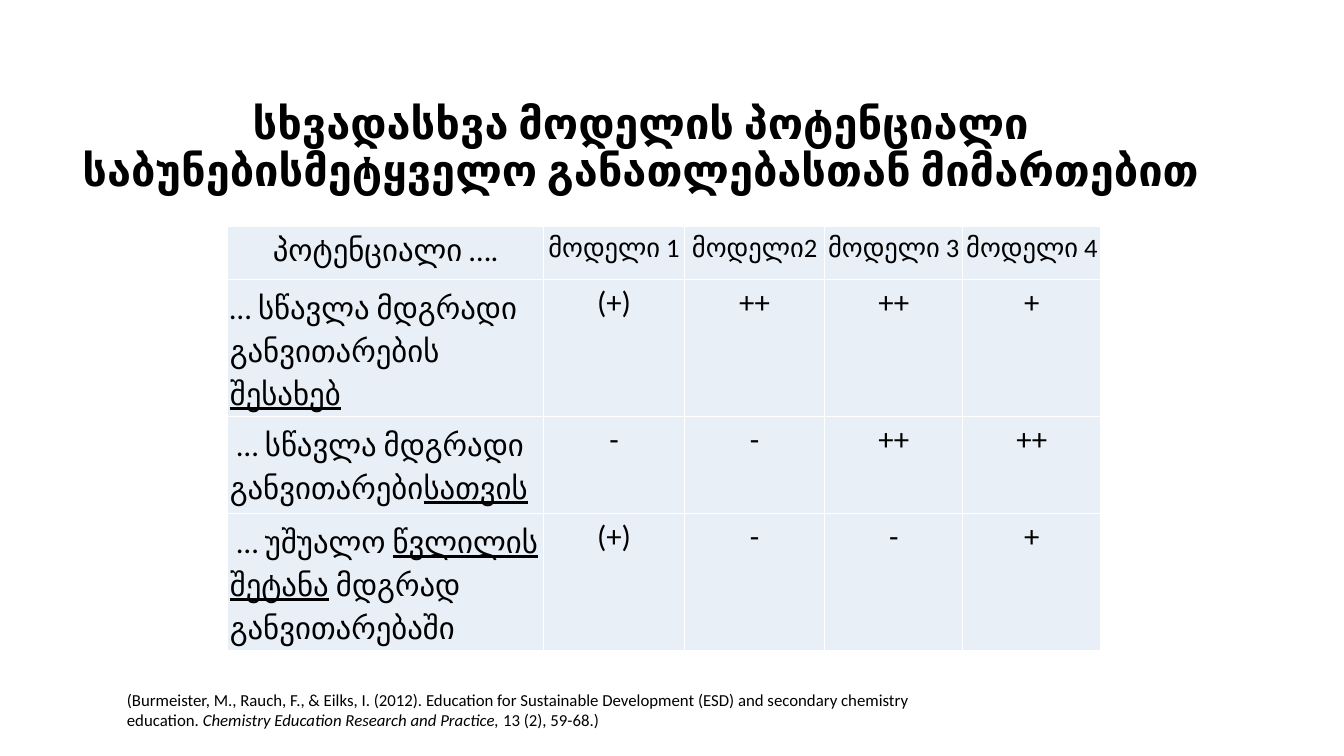
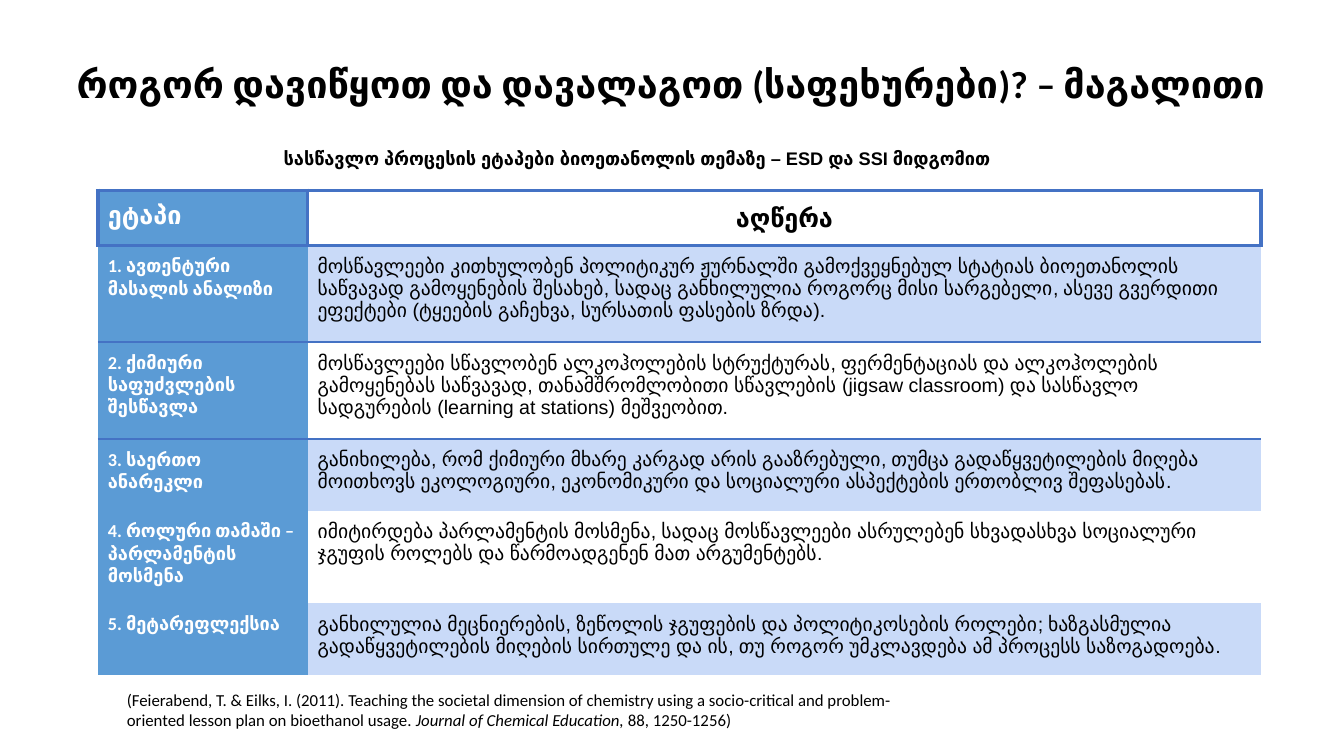
import pptx
import pptx.dml.color
import pptx.enum.text
import pptx.oxml
import pptx.oxml.ns
import pptx.util

Inches = pptx.util.Inches
CENTER = pptx.enum.text.PP_ALIGN.CENTER
LEFT = pptx.enum.text.PP_ALIGN.LEFT
MIDDLE = pptx.enum.text.MSO_ANCHOR.MIDDLE
TOP = pptx.enum.text.MSO_ANCHOR.TOP
BLACK, WHITE = "000000", "FFFFFF"
PALE, STAGE_BLUE, BAND_BLUE, LINE_BLUE = "E9EFF7", "5B9BD5", "C9DAF8", "4472C4"
NO_STYLE = "{2D5ABB26-0587-4C30-8999-92F81FD0307C}"
TITLE = {"size": 31, "bold": True, "align": CENTER, "spacing": 0.9}


def write(frame, runs, size, font="Calibri", color=BLACK, bold=False, align=LEFT, spacing=None):
    paragraph = frame.paragraphs[0]
    paragraph.alignment = align
    paragraph.line_spacing = spacing
    for text, changes in runs:
        run = paragraph.add_run()
        run.text = text
        values = {"name": font, "size": pptx.util.Pt(size), "bold": bold, **changes}
        for name, value in values.items():
            setattr(run.font, name, value)
        run.font.color.rgb = pptx.dml.color.RGBColor.from_string(color)


def style_cell(cell, fill, margins, borders):
    for side, (color, width) in borders.items():
        cell._tc.get_or_add_tcPr().append(pptx.oxml.parse_xml(
            f'<a:ln{side} {pptx.oxml.ns.nsdecls("a")} w="{pptx.util.Pt(width)}">'
            f'<a:solidFill><a:srgbClr val="{color}"/></a:solidFill></a:ln{side}>'))
    if fill:
        cell.fill.solid()
        cell.fill.fore_color.rgb = pptx.dml.color.RGBColor.from_string(fill)
    else:
        cell.fill.background()
    for name, value in zip(("left", "right", "top", "bottom"), margins):
        setattr(cell, f"margin_{name}", Inches(value))


presentation = pptx.Presentation()
presentation.slide_width = Inches(13.33)
presentation.slide_height = Inches(7.5)

slide_texts = [
    [
        ((0.24, 0.85, 12.23, 1.25), MIDDLE,
         [("სხვადასხვა მოდელის პოტენციალი საბუნებისმეტყველო განათლებასთან მიმართებით", {})], TITLE),
        ((1.16, 6.79, 7.99, 0.5), TOP,
         [("(Burmeister, M., Rauch, F., & Eilks, I. (2012). Education for Sustainable "
           "Development (ESD) and secondary chemistry education. ", {}),
          ("Chemistry Education Research and Practice, ", {"italic": True}),
          ("13 (2), 59-68.)", {})], {"size": 12}),
    ],
    [
        ((0.4, 0.4, 12.51, 0.91), MIDDLE,
         [("როგორ დავიწყოთ და დავალაგოთ (საფეხურები)? – მაგალითი", {})], {**TITLE, "size": 27}),
        ((1.16, 6.79, 7.99, 0.5), TOP,
         [("(Feierabend, T. & Eilks, I. (2011). Teaching the societal dimension of chemistry "
           "using a socio-critical and problem-oriented lesson plan on bioethanol usage. ", {}),
          ("Journal of Chemical Education,", {"italic": True}),
          (" 88, 1250-1256)", {})], {"size": 12}),
        ((1.24, 1.43, 10.15, 0.25), MIDDLE,
         [("სასწავლო პროცესის ეტაპები ბიოეთანოლის თემაზე – ESD და SSI მიდგომით", {})],
         {"size": 13, "font": "Arial", "bold": True, "align": CENTER, "spacing": 1.15}),
    ],
]
table_grids = [
    (2.26, 2.25, [3.13, 1.4, 1.39, 1.37, 1.37], [0.52, 0.96, 0.96, 0.96]),
    (0.97, 1.89, [2.08, 9.46], [0.45, 0.96, 0.96, 0.71, 0.92, 0.71]),
]

tables = []
for texts, (left, top, widths, heights) in zip(slide_texts, table_grids):
    slide = presentation.slides.add_slide(presentation.slide_layouts[6])
    for box, anchor, runs, style in texts:
        frame = slide.shapes.add_textbox(*map(Inches, box)).text_frame
        frame.word_wrap = True
        frame.vertical_anchor = anchor
        write(frame, runs, **style)
    table = slide.shapes.add_table(
        len(heights), len(widths), Inches(left), Inches(top),
        Inches(sum(widths)), Inches(sum(heights))).table
    table._tbl.tblPr.find(pptx.oxml.ns.qn("a:tableStyleId")).text = NO_STYLE
    for column, width in zip(table.columns, widths):
        column.width = Inches(width)
    for row, height in zip(table.rows, heights):
        row.height = Inches(height)
    tables.append(table)

potential_table, stage_table = tables
underlined = {"underline": True}
potentials = [
    ([("პოტენციალი ….", {})], ["მოდელი 1", "მოდელი2", "მოდელი 3", "მოდელი 4"]),
    ([("… სწავლა მდგრადი განვითარების ", {}), ("შესახებ", underlined)],
     ["(+)", "++", "++", "+"]),
    ([(" … სწავლა მდგრადი განვითარები", {}), ("სათვის", underlined)],
     ["-", "-", "++", "++"]),
    ([(" … უშუალო ", {}), ("წვლილის შეტანა", underlined), (" მდგრად განვითარებაში", {})],
     ["(+)", "-", "-", "+"]),
]
white_grid = {side: (WHITE, 0.96) for side in "LRTB"}
for row, (label, ratings) in enumerate(potentials):
    for column, runs in enumerate([label] + [[(rating, {})] for rating in ratings]):
        cell = potential_table.cell(row, column)
        style_cell(cell, PALE, (0.02, 0.02, 0.05, 0.05), white_grid)
        is_label = row > 0 and column == 0
        write(cell.text_frame, runs, size=19 if row == 0 and column else 22,
              align=LEFT if is_label else CENTER, spacing=1.15 if is_label else None)

stages = [
    ("ეტაპი", "აღწერა"),
    ("1. ავთენტური მასალის ანალიზი",
     "მოსწავლეები კითხულობენ პოლიტიკურ ჟურნალში გამოქვეყნებულ სტატიას ბიოეთანოლის "
     "საწვავად გამოყენების შესახებ, სადაც განხილულია როგორც მისი სარგებელი, ასევე გვერდითი "
     "ეფექტები (ტყეების გაჩეხვა, სურსათის ფასების ზრდა)."),
    ("2. ქიმიური საფუძვლების შესწავლა",
     "მოსწავლეები სწავლობენ ალკოჰოლების სტრუქტურას, ფერმენტაციას და ალკოჰოლების "
     "გამოყენებას საწვავად, თანამშრომლობითი სწავლების (jigsaw classroom) და სასწავლო "
     "სადგურების (learning at stations) მეშვეობით."),
    ("3. საერთო ანარეკლი",
     "განიხილება, რომ ქიმიური მხარე კარგად არის გააზრებული, თუმცა გადაწყვეტილების მიღება "
     "მოითხოვს ეკოლოგიური, ეკონომიკური და სოციალური ასპექტების ერთობლივ შეფასებას."),
    ("4. როლური თამაში – პარლამენტის მოსმენა",
     "იმიტირდება პარლამენტის მოსმენა, სადაც მოსწავლეები ასრულებენ სხვადასხვა სოციალური "
     "ჯგუფის როლებს და წარმოადგენენ მათ არგუმენტებს."),
    ("5. მეტარეფლექსია",
     "განხილულია მეცნიერების, ზეწოლის ჯგუფების და პოლიტიკოსების როლები; ხაზგასმულია "
     "გადაწყვეტილების მიღების სირთულე და ის, თუ როგორ უმკლავდება ამ პროცესს საზოგადოება."),
]
stage_borders = {
    0: {side: (LINE_BLUE, 3) for side in "LRTB"},
    1: {"T": (LINE_BLUE, 3), "B": (LINE_BLUE, 2)},
    2: {"T": (LINE_BLUE, 2)},
}
for row, (stage, description) in enumerate(stages):
    header = row == 0
    stage_cell, description_cell = stage_table.cell(row, 0), stage_table.cell(row, 1)
    for cell, fill in ((stage_cell, STAGE_BLUE), (description_cell, BAND_BLUE if row % 2 else None)):
        style_cell(cell, fill, (0.1,) * 4, stage_borders.get(row, {}))
    write(stage_cell.text_frame, [(stage, {})], size=18 if header else 13, color=WHITE, bold=True)
    write(description_cell.text_frame, [(description, {})], size=18 if header else 14,
          font="Arial", bold=header, align=CENTER if header else LEFT,
          spacing=1.15 if header else None)

presentation.save("out.pptx")
